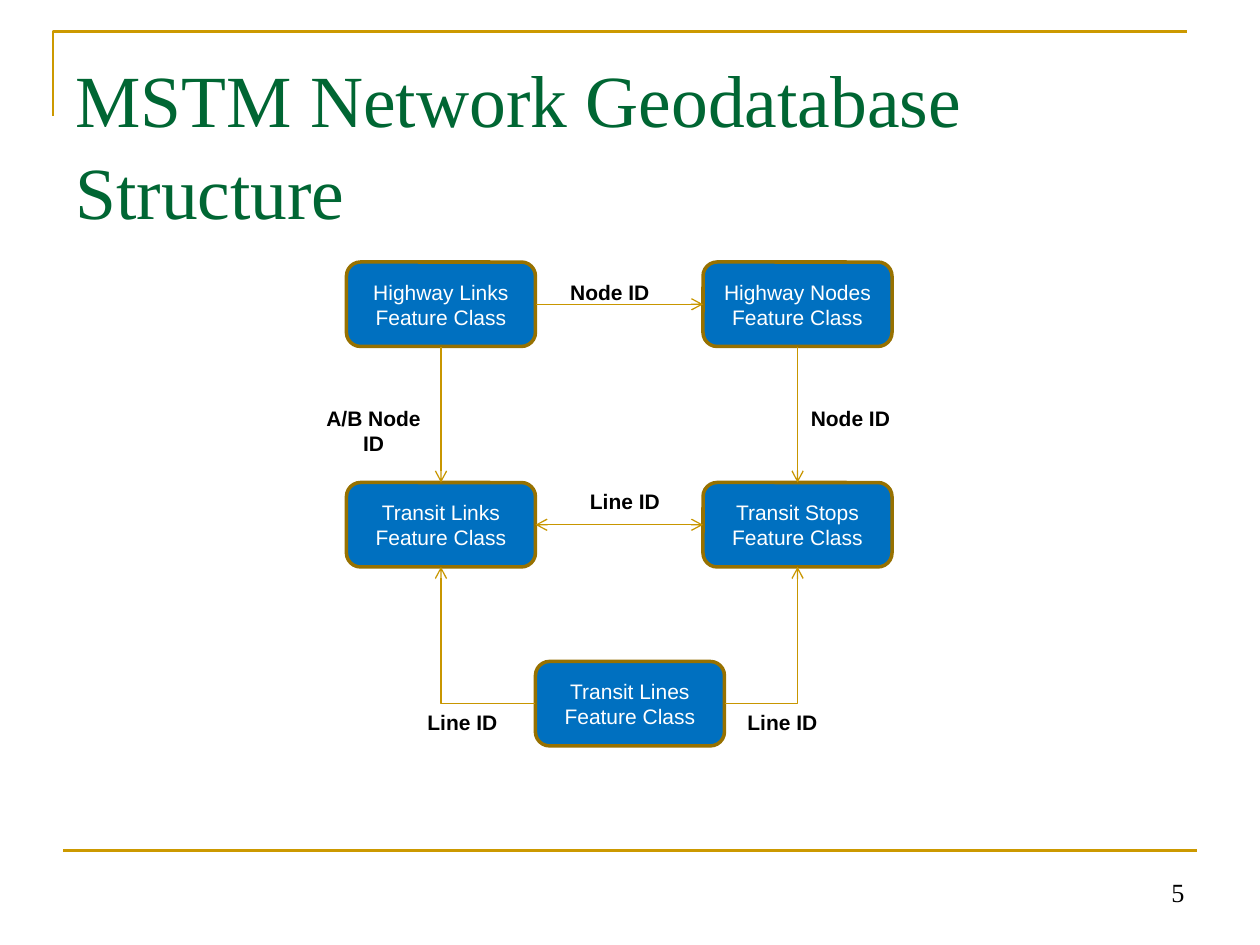
from lxml import etree
from pptx import Presentation, util as u
from pptx.dml.color import RGBColor
from pptx.enum import shapes, text
from pptx.oxml.ns import qn

Inches, Pt = u.Inches, u.Pt
HUES = {"rule": "CC9900", "title": "006633", "ink": "000000", "box": "0070C0",
        "edge": "977100", "link": "C89600", "white": "FFFFFF"}
HUES = {name: RGBColor.from_string(code) for name, code in HUES.items()}
LEFT, MID, RIGHT = text.PP_ALIGN.LEFT, text.PP_ALIGN.CENTER, text.PP_ALIGN.RIGHT

deck = Presentation()
deck.slide_width, deck.slide_height = Inches(10), Inches(7.5)
slide = deck.slides.add_slide(deck.slide_layouts[6])
parts = slide.shapes


def write(shape, words, hue, align, frame={}, **font):
    """Fill a shape with one paragraph in the given format."""
    body = shape.text_frame
    for key, value in ({"word_wrap": True} | frame).items():
        setattr(body, key, value)
    para = body.paragraphs[0]
    para.alignment = align
    run = para.add_run()
    run.text = words
    for key, value in ({"name": "Arial", "size": Pt(12)} | font).items():
        setattr(run.font, key, value)
    run.font.color.rgb = HUES[hue]
    return para


def draw(kind, start, end, hue, width):
    """Add a connector without shadow."""
    line = parts.add_connector(kind, *map(Inches, start + end))
    line.line.color.rgb = HUES[hue]
    line.line.width = Pt(width)
    etree.SubElement(line._element.spPr, qn("a:effectLst"))
    return line


STRAIGHT, ELBOW = shapes.MSO_CONNECTOR.STRAIGHT, shapes.MSO_CONNECTOR.ELBOW
MIDDLE = {"vertical_anchor": text.MSO_ANCHOR.MIDDLE}

# Frame lines
pen = parts.build_freeform(Inches(0.42), Inches(0.92))
pen.add_line_segments([(Inches(0.42), Inches(0.25)), (Inches(9.42), Inches(0.25))], close=False)
frame = pen.convert_to_shape()
frame.shadow.inherit = False
frame.fill.background()
frame.line.color.rgb = HUES["rule"]
frame.line.width = Pt(1.5)
draw(STRAIGHT, (0.5, 6.75), (9.5, 6.75), "rule", 1.5)

# Title and page number
title = parts.add_textbox(Inches(0.5), Inches(0.3), Inches(9.5), Inches(1.25))
para = write(title, "MSTM Network Geodatabase Structure", "title", LEFT,
             {"margin_top": Inches(0.1)}, name="Times New Roman", size=Pt(42))
para.line_spacing = 1.04
page = parts.add_textbox(Inches(0.5), Inches(6.83), Inches(9), Inches(0.5))
write(page, "5", "ink", RIGHT, MIDDLE, name="Times New Roman", size=Pt(15))

# Feature classes
boxes = {}
for name, left, top in [
    ("Highway Links", 2.75, 2.08), ("Highway Nodes", 5.58, 2.08),
    ("Transit Links", 2.75, 3.83), ("Transit Lines", 4.25, 5.25),
    ("Transit Stops", 5.58, 3.83),
]:
    box = parts.add_shape(shapes.MSO_SHAPE.ROUNDED_RECTANGLE,
                          Inches(left), Inches(top), Inches(1.5), Inches(0.67))
    box.shadow.inherit = False
    box.fill.solid()
    box.fill.fore_color.rgb = HUES["box"]
    box.line.color.rgb = HUES["edge"]
    box.line.width = Pt(2)
    write(box, name + " Feature Class", "white", MID, MIDDLE)
    boxes[name] = box

# Links between classes; sides are 0 top, 1 left, 2 bottom, 3 right
for kind, first, out, last, into, ends, preset in [
    (STRAIGHT, "Highway Links", 3, "Highway Nodes", 1, ["tailEnd"], None),
    (STRAIGHT, "Highway Nodes", 2, "Transit Stops", 0, ["tailEnd"], None),
    (STRAIGHT, "Highway Links", 2, "Transit Links", 0, ["tailEnd"], None),
    (ELBOW, "Transit Lines", 1, "Transit Links", 2, ["tailEnd"], "bentConnector2"),
    (ELBOW, "Transit Lines", 3, "Transit Stops", 2, ["tailEnd"], "bentConnector2"),
    (ELBOW, "Transit Links", 3, "Transit Stops", 1, ["headEnd", "tailEnd"], None),
]:
    link = draw(kind, (0, 0), (1, 1), "link", 0.75)
    link.begin_connect(boxes[first], out)
    link.end_connect(boxes[last], into)
    if preset:
        link._element.spPr.find(qn("a:prstGeom")).set("prst", preset)
    for end in ends:
        etree.SubElement(link.line._get_or_add_ln(), qn("a:" + end), type="arrow")

# Key names on the links
for words, left, top, width, height in [
    ("Node ID", 4.42, 2.17, 0.84, 0.3), ("A/B Node ID", 2.42, 3.17, 1.09, 0.5),
    ("Line ID", 3.29, 5.58, 0.76, 0.3), ("Line ID", 5.83, 5.58, 0.76, 0.3),
    ("Node ID", 6.33, 3.17, 0.84, 0.3), ("Line ID", 4.58, 3.83, 0.76, 0.3),
]:
    label = parts.add_textbox(*map(Inches, (left, top, width, height)))
    write(label, words, "ink", MID, {"word_wrap": words == "A/B Node ID"}, bold=True)

deck.save("out.pptx")
